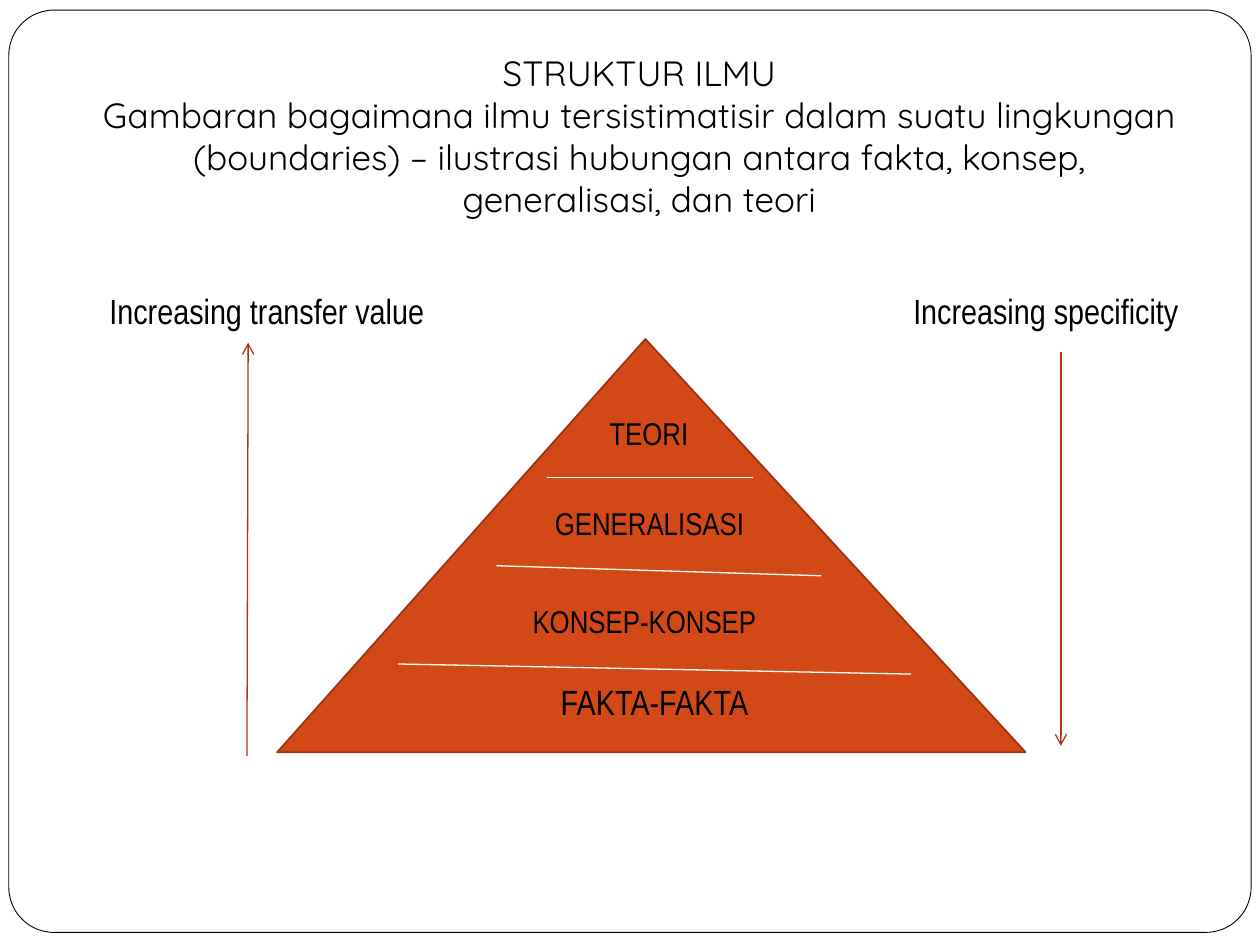
from lxml import etree
from pptx import Presentation
from pptx.dml.color import RGBColor
from pptx.enum import shapes, text
from pptx.oxml.ns import qn
from pptx.util import Inches, Pt

THEME = {
    "ink": "000000", "paper": "FFFFFF", "pyramid": "D34817",
    "pyramid_edge": "9C3511", "arrow": "B1360B",
    "title_font": "Quicksand", "label_font": "Arial Narrow",
    "large": 20, "small": 18,
}

TITLE = [
    "STRUKTUR ILMU",
    "Gambaran bagaimana ilmu tersistimatisir dalam suatu lingkungan "
    "(boundaries) – ilustrasi hubungan antara fakta, konsep, generalisasi, dan teori",
]
TITLE_AREA = (0.66, 0.36, 8.83, 1.45)
FRAME_AREA = (0.07, 0.08, 9.86, 7.32)
PYRAMID_AREA = (2.2, 2.69, 5.94, 3.28)

# text, area, size, alignment
LEFT, CENTER = text.PP_ALIGN.LEFT, text.PP_ALIGN.CENTER
LABELS = [
    ("Increasing transfer value", (0.77, 2.25, 2.81, 0.44), "large", LEFT),
    ("Increasing specificity", (7.15, 2.25, 2.73, 0.44), "large", LEFT),
    ("TEORI", (4.41, 3.24, 1.48, 0.4), "small", CENTER),
    ("GENERALISASI", (4.18, 3.95, 1.95, 0.4), "small", CENTER),
    ("KONSEP-KONSEP", (3.71, 4.73, 2.81, 0.4), "small", CENTER),
    ("FAKTA-FAKTA", (3.71, 5.35, 2.97, 0.44), "large", CENTER),
]

# start x, start y, end x, end y
DIVIDERS = [
    (4.34, 3.79, 5.98, 3.79),
    (3.94, 4.49, 6.52, 4.57),
    (3.16, 5.27, 7.23, 5.35),
]
ARROWS = [(1.96, 6, 1.97, 2.72), (8.42, 2.79, 8.42, 5.92)]


def color(name):
    return RGBColor.from_string(THEME[name])


def inches(values):
    return [Inches(value) for value in values]


def write(box, lines, font, size, align):
    frame = box.text_frame
    frame.text = "\n".join(lines)
    frame.word_wrap = True
    frame.auto_size = text.MSO_AUTO_SIZE.NONE
    frame.vertical_anchor = text.MSO_ANCHOR.TOP
    for para in frame.paragraphs:
        para.alignment = align
        para.space_before = Pt(0)
        para.line_spacing = 1.0
        for span in para.runs:
            span.font.name = THEME[font]
            span.font.size = Pt(THEME[size])
            span.font.color.rgb = color("ink")


def add_outlined(page, kind, area, adjustment, fill, edge, width):
    shape = page.shapes.add_shape(kind, *inches(area))
    shape.adjustments[0] = adjustment
    shape.shadow.inherit = False
    shape.fill.solid()
    shape.fill.fore_color.rgb = color(fill)
    shape.line.color.rgb = color(edge)
    shape.line.width = Pt(width)
    return shape


def add_line(page, ends, ink, arrow=False):
    line = page.shapes.add_connector(shapes.MSO_CONNECTOR.STRAIGHT, *inches(ends))
    line.line.color.rgb = color(ink)
    line.line.width = Pt(0.75)
    if arrow:
        etree.SubElement(line.line._get_or_add_ln(), qn("a:tailEnd"), type="arrow")
    etree.SubElement(line._element.spPr, qn("a:effectLst"))


def main():
    deck = Presentation()
    deck.slide_width, deck.slide_height = Inches(10), Inches(7.5)
    page = deck.slides.add_slide(deck.slide_layouts[5])

    title = page.shapes.title
    title.left, title.top, title.width, title.height = inches(TITLE_AREA)
    write(title, TITLE, "title_font", "large", CENTER)

    frame = add_outlined(page, shapes.MSO_SHAPE.ROUNDED_RECTANGLE, FRAME_AREA,
                         0.049, "paper", "ink", 0.5)
    title.element.addprevious(frame.element)  # the frame lies behind the title
    add_outlined(page, shapes.MSO_SHAPE.ISOSCELES_TRIANGLE, PYRAMID_AREA,
                 0.492, "pyramid", "pyramid_edge", 1)

    for ends in DIVIDERS:
        add_line(page, ends, "paper")
    for ends in ARROWS:
        add_line(page, ends, "arrow", arrow=True)
    for label, area, size, align in LABELS:
        box = page.shapes.add_textbox(*inches(area))
        write(box, [label], "label_font", size, align)

    deck.save("out.pptx")


if __name__ == "__main__":
    main()
